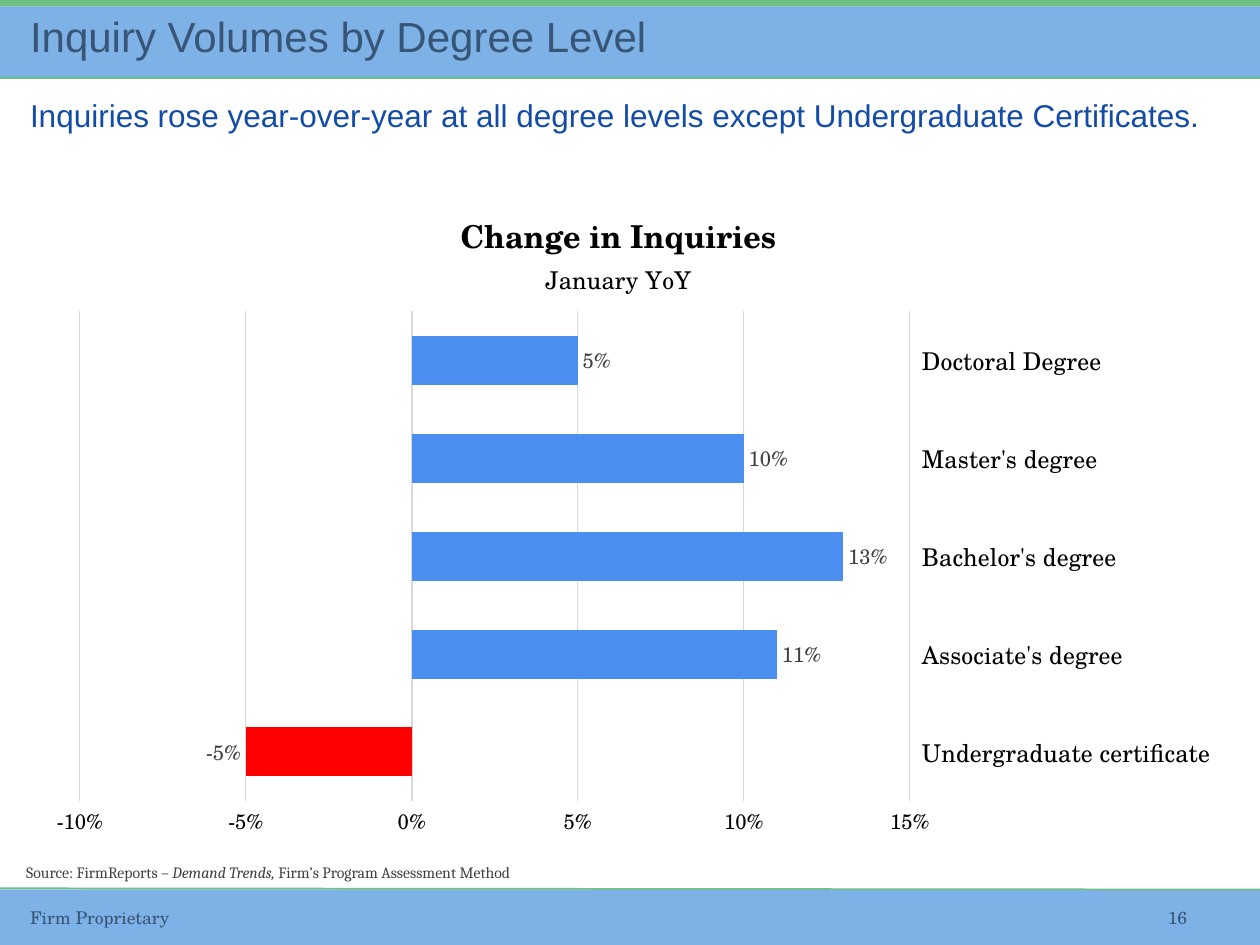
from dataclasses import dataclass

from lxml.etree import SubElement
from pptx import Presentation
from pptx.chart.data import CategoryChartData
from pptx.dml.color import RGBColor
from pptx.enum.chart import (XL_CHART_TYPE as ChartType, XL_LABEL_POSITION as LabelPos,
                             XL_TICK_LABEL_POSITION as TickLabelPos, XL_TICK_MARK as TickMark)
from pptx.enum.shapes import MSO_CONNECTOR as Connector, MSO_SHAPE as Shape
from pptx.enum.text import MSO_ANCHOR as Anchor, PP_ALIGN as Align
from pptx.oxml import parse_xml
from pptx.oxml.ns import nsdecls, qn
from pptx.util import Inches, Pt


@dataclass(frozen=True)
class Theme:
    band: str = "7EB2E6"
    accent: str = "6FC085"
    heading: str = "375577"
    message: str = "124CA6"
    muted: str = "404040"
    ink: str = "000000"
    grid: str = "D9D9D9"
    rise: str = "4A8EF0"
    fall: str = "FF0000"
    sans: str = "Arial"
    serif: str = "TeX Gyre Schola"
    source: str = "Cambria"
    title_size: int = 24
    lead_size: int = 18
    category_size: int = 14
    value_size: int = 12
    footer_size: int = 10
    source_size: int = 9


THEME = Theme()
SLIDE_W, SLIDE_H = 10, 7.5

CHANGES = {
    "Undergraduate certificate": -0.05,
    "Associate's degree": 0.11,
    "Bachelor's degree": 0.13,
    "Master's degree": 0.10,
    "Doctoral Degree": 0.05,
}


def rgb(color):
    return RGBColor.from_string(color)


def style_font(font, size, color, name=THEME.serif, bold=False, italic=False):
    font.size, font.name, font.bold, font.italic = Pt(size), name, bold, italic
    font.color.rgb = rgb(color)


def add_text(slide, box, runs, size, color, font=THEME.serif, anchor=Anchor.TOP,
             align=Align.LEFT, wrap=True, line_spacing=None):
    """Place one paragraph; runs is a string or a list of (text, italic)."""
    frame = slide.shapes.add_textbox(*map(Inches, box)).text_frame
    frame.word_wrap, frame.vertical_anchor = wrap, anchor
    paragraph = frame.paragraphs[0]
    paragraph.alignment = align
    if line_spacing:
        paragraph.line_spacing = line_spacing
    for text, italic in [(runs, False)] if isinstance(runs, str) else runs:
        run = paragraph.add_run()
        run.text = text
        style_font(run.font, size, color, font, italic=italic)


def add_band(slide, box, color):
    band = slide.shapes.add_shape(Shape.RECTANGLE, *map(Inches, box))
    band.shadow.inherit = False
    band.fill.solid()
    band.fill.fore_color.rgb = rgb(color)
    band.line.fill.background()


def add_rule(slide, left, right, start_y, end_y):
    rule = slide.shapes.add_connector(
        Connector.STRAIGHT, *map(Inches, (left, start_y, right, end_y)))
    rule.line.color.rgb = rgb(THEME.accent)
    rule.line.width = Pt(1)
    SubElement(rule._element.spPr, qn("a:effectLst"))


def set_layout(parent, position, inner=False, **fractions):
    """Give a chart part a manual layout in fractions of the chart."""
    for old in parent.findall(qn("c:layout")):
        parent.remove(old)
    target = '<c:layoutTarget val="inner"/>' if inner else ""
    modes = "".join(f'<c:{key}Mode val="edge"/>' for key in "xy")
    values = "".join(f'<c:{key} val="{value}"/>' for key, value in fractions.items())
    parent.insert(position, parse_xml(
        f'<c:layout {nsdecls("c")}><c:manualLayout>{target}{modes}{values}'
        '</c:manualLayout></c:layout>'))


def header(slide, box):
    left, top, width, height = box
    stripe = 0.05
    add_band(slide, (left, top + stripe, width, height - stripe), THEME.band)
    add_band(slide, (left, top, width, stripe), THEME.accent)
    add_rule(slide, left, left + width, top + height, top + height)
    add_text(slide, (left + 0.14, top, 6.11, height), "Inquiry Volumes by Degree Level",
             THEME.title_size, THEME.heading, THEME.sans, Anchor.MIDDLE, line_spacing=0.89)


def footer(slide, box):
    left, top, width, height = box
    add_band(slide, box, THEME.band)
    add_rule(slide, left, left + width, top - 0.01, top)
    number_w = 1.31
    for part, text, align in (
            ((left + 0.14, top, 2.37, height), "Firm Proprietary", Align.LEFT),
            ((left + width - number_w, top, number_w, height), "16", Align.CENTER)):
        add_text(slide, part, text, THEME.footer_size, THEME.heading,
                 anchor=Anchor.MIDDLE, align=align)


def change_chart(slide, box):
    data = CategoryChartData(number_format="0%")
    data.categories = list(CHANGES)
    data.add_series("Change in Inquiries", list(CHANGES.values()))
    chart = slide.shapes.add_chart(
        ChartType.BAR_CLUSTERED, *map(Inches, box), data).chart
    style_font(chart.font, THEME.footer_size, THEME.ink)
    chart.has_legend = False

    # Two-line chart title
    title = chart.chart_title.text_frame
    title.text = "Change in Inquiries\nJanuary YoY"
    sizes = (THEME.lead_size, THEME.category_size)
    for paragraph, size, bold in zip(title.paragraphs, sizes, (True, False)):
        style_font(paragraph.runs[0].font, size, THEME.ink, bold=bold)
    set_layout(chart.element.find(".//" + qn("c:title")), 1, x=0.36, y=0)
    set_layout(chart.element.find(".//" + qn("c:plotArea")), 0, inner=True,
               x=0.023, y=0.167, w=0.742, h=0.771)

    # Degree levels, listed to the right of the bars
    levels = chart.category_axis
    levels.tick_label_position = TickLabelPos.HIGH
    levels.format.line.color.rgb = rgb(THEME.grid)
    levels.format.line.width = Pt(1)
    style_font(levels.tick_labels.font, THEME.category_size, THEME.ink)

    # Percentage scale
    scale = chart.value_axis
    scale.minimum_scale, scale.maximum_scale, scale.major_unit = -0.1, 0.15, 0.05
    scale.format.line.fill.background()
    scale.major_gridlines.format.line.color.rgb = rgb(THEME.grid)
    scale.major_gridlines.format.line.width = Pt(0.75)
    scale.tick_labels.number_format = "0%"
    scale.tick_labels.number_format_is_linked = False
    style_font(scale.tick_labels.font, THEME.value_size, THEME.ink)
    for axis in (levels, scale):
        axis.major_tick_mark = axis.minor_tick_mark = TickMark.NONE

    # Bars, with declines picked out
    plot = chart.plots[0]
    plot.gap_width, plot.vary_by_categories = 100, False
    bars = plot.series[0]
    bars.invert_if_negative = False
    bars.format.fill.solid()
    bars.format.fill.fore_color.rgb = rgb(THEME.rise)
    for index, change in enumerate(CHANGES.values()):
        if change < 0:
            fill = bars.points[index].format.fill
            fill.solid()
            fill.fore_color.rgb = rgb(THEME.fall)
    labels = bars.data_labels
    labels.show_value, labels.position = True, LabelPos.OUTSIDE_END
    labels.number_format, labels.number_format_is_linked = "0%", False
    style_font(labels.font, THEME.value_size, THEME.muted)


def main():
    deck = Presentation()
    deck.slide_width, deck.slide_height = Inches(SLIDE_W), Inches(SLIDE_H)
    slide = deck.slides.add_slide(deck.slide_layouts[6])

    header(slide, (0, 0, SLIDE_W, 0.62))
    add_text(slide, (0.14, 0.74, 9.86, 0.46),
             "Inquiries rose year-over-year at all degree levels except "
             "Undergraduate Certificates.",
             THEME.lead_size, THEME.message, THEME.sans, line_spacing=0.94)
    change_chart(slide, (0.43, 1.63, 9.18, 5.04))
    add_text(slide, (0.11, 6.8, 4.38, 0.25),
             [("Source: FirmReports – ", False), ("Demand Trends, ", True),
              ("Firm’s Program Assessment Method", False)],
             THEME.source_size, THEME.muted, THEME.source, wrap=False)
    footer(slide, (0, 7.06, SLIDE_W, 0.44))

    deck.save("out.pptx")


if __name__ == "__main__":
    main()
